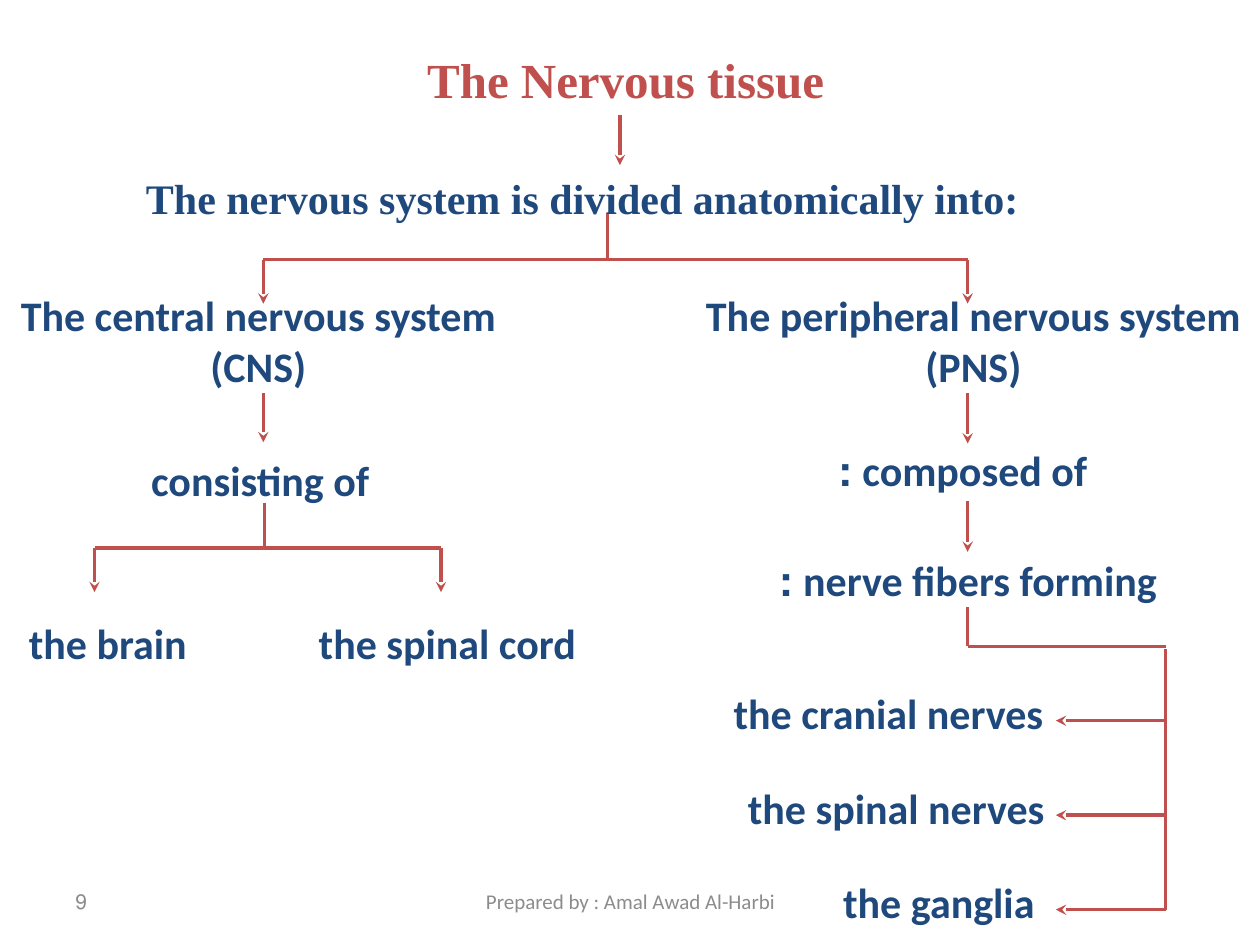
from lxml import etree
from pptx import Presentation
from pptx.dml.color import RGBColor
from pptx.enum.shapes import MSO_CONNECTOR
from pptx.enum.text import MSO_ANCHOR, MSO_AUTO_SIZE, PP_ALIGN
from pptx.oxml.ns import qn
from pptx.util import Inches, Pt

LEFT, CENTER, RIGHT = PP_ALIGN.LEFT, PP_ALIGN.CENTER, PP_ALIGN.RIGHT
TOP, MIDDLE = MSO_ANCHOR.TOP, MSO_ANCHOR.MIDDLE
FIT, FIXED = MSO_AUTO_SIZE.SHAPE_TO_FIT_TEXT, MSO_AUTO_SIZE.NONE
STRAIGHT = MSO_CONNECTOR.STRAIGHT

RED = RGBColor(0xC0, 0x50, 0x4D)
NAVY = RGBColor(0x1F, 0x49, 0x7D)
GRAY = RGBColor(0x8C, 0x8C, 0x8C)
SERIF, SANS = "Times New Roman", "Calibri"

# The slide is a grid of 100 columns by 75 rows
SLIDE_W, SLIDE_H = Inches(10), Inches(7.5)
COL, ROW = SLIDE_W / 100, SLIDE_H / 75


def add_label(s, box, x, y, w, h, text, align=CENTER, size=24, color=NAVY,
              font=SANS, bold=True, rtl=True, wrap=True, anchor=TOP, fit=FIT):
    """Place one line of text at a grid offset inside the box."""
    left, top = box
    tb = s.shapes.add_textbox(round((left + x) * COL), round((top + y) * ROW),
                              round(w * COL), round(h * ROW))
    tf = tb.text_frame
    tf.word_wrap, tf.auto_size, tf.vertical_anchor = wrap, fit, anchor
    p = tf.paragraphs[0]
    p.text, p.alignment = text, align
    f = p.font
    f.name, f.size, f.bold = font, Pt(size), bold
    f.color.rgb = color
    if rtl:
        p._p.get_or_add_pPr().set("rtl", "1")


def add_line(s, box, x1, y1, x2, y2, arrow=False):
    """Draw a line between two grid offsets, with an arrowhead at its end."""
    left, top = box
    c = s.shapes.add_connector(
        STRAIGHT, round((left + x1) * COL), round((top + y1) * ROW),
        round((left + x2) * COL), round((top + y2) * ROW))
    c.line.color.rgb, c.line.width = RED, Pt(2)
    if arrow:
        etree.SubElement(c.line._get_or_add_ln(), qn("a:tailEnd"), type="stealth")
    etree.SubElement(c._element.spPr, qn("a:effectLst"))


def add_fork(s, box, stem, y, branches):
    """Split one stem into two arrows, below a horizontal bar."""
    half = 3.6
    first, last = branches
    add_line(s, box, stem, y, stem, y + half)
    add_line(s, box, first, y + half, last, y + half)
    for x in branches:
        add_line(s, box, x, y + half, x, y + 2 * half - 0.1, arrow=True)


def add_header(s, box):
    add_label(s, box, 32.7, 3.4, 33.9, 5.7, "The Nervous tissue", size=28,
              color=RED, font=SERIF, rtl=False, wrap=False, anchor=MIDDLE)
    add_line(s, box, 49.2, 9.1, 49.2, 13.1, arrow=True)
    add_label(s, box, 10.6, 13.1, 73.1, 5.1,
              "The nervous system is divided anatomically into:", LEFT,
              font=SERIF, rtl=False, wrap=False, anchor=MIDDLE)
    add_fork(s, box, 48.2, 17, (20.9, 76.8))


def add_central(s, box):
    add_label(s, box, 0.4, 0, 40.2, 9.1, "The central nervous system (CNS)")
    add_line(s, box, 20.9, 8.7, 20.9, 12.6, arrow=True)
    add_label(s, box, 10.2, 13.1, 20.9, 5, "consisting of")
    add_fork(s, box, 21, 17.4, (7.5, 35))
    add_label(s, box, 0.4, 26, 15.4, 5.1, "the brain ", RIGHT, wrap=False)
    add_label(s, box, 23.2, 26, 23.5, 5.1, "the spinal cord", RIGHT, wrap=False)


def add_peripheral(s, box):
    axis, spine, tip = 26.8, 42.5, 33.8
    add_label(s, box, 4.9, 0, 44.7, 9.1, "The peripheral nervous system (PNS)")
    add_label(s, box, 15.7, 12.3, 22.8, 5.1, " composed of :", LEFT)
    add_label(s, box, 11, 21, 32.3, 5.1, "nerve fibers forming :", LEFT)
    for y in (8.7, 17.3):
        add_line(s, box, axis, y, axis, y + 4, arrow=True)

    # Elbow to the spine, then one arrow per kind of nerve
    first, step = 34.7, 7.5
    add_line(s, box, axis, 25.7, axis, 28.8)
    add_line(s, box, axis, 28.8, spine, 28.8)
    add_line(s, box, spine, 29, spine, first + 2 * step)
    nerves = [("the cranial nerves ", 6.2, 27.6),
              ("the spinal nerves", 7.6, 26.3),
              ("the ganglia", 15.7, 17.4)]
    for i, (text, x, w) in enumerate(nerves):
        y = first + i * step
        add_line(s, box, spine, y, tip, y, arrow=True)
        add_label(s, box, x, y - 3.1, w, 5.1, text, RIGHT, wrap=False)


def add_footer(s, box):
    for x, w, text, align in ((5, 23.3, "9", LEFT),
                              (34.2, 31.7, "Prepared by : Amal Awad Al-Harbi", CENTER)):
        add_label(s, box, x, 0, w, 4, text, align, size=12, color=GRAY,
                  bold=False, anchor=MIDDLE, fit=FIXED)


def main():
    prs = Presentation()
    prs.slide_width, prs.slide_height = SLIDE_W, SLIDE_H
    s = prs.slides.add_slide(prs.slide_layouts[6])
    # Each region starts at a column and row of the slide
    add_header(s, (0, 0))
    add_central(s, (0, 22.5))
    add_peripheral(s, (50, 22.5))
    add_footer(s, (0, 69.5))
    prs.save("out.pptx")


if __name__ == "__main__":
    main()
